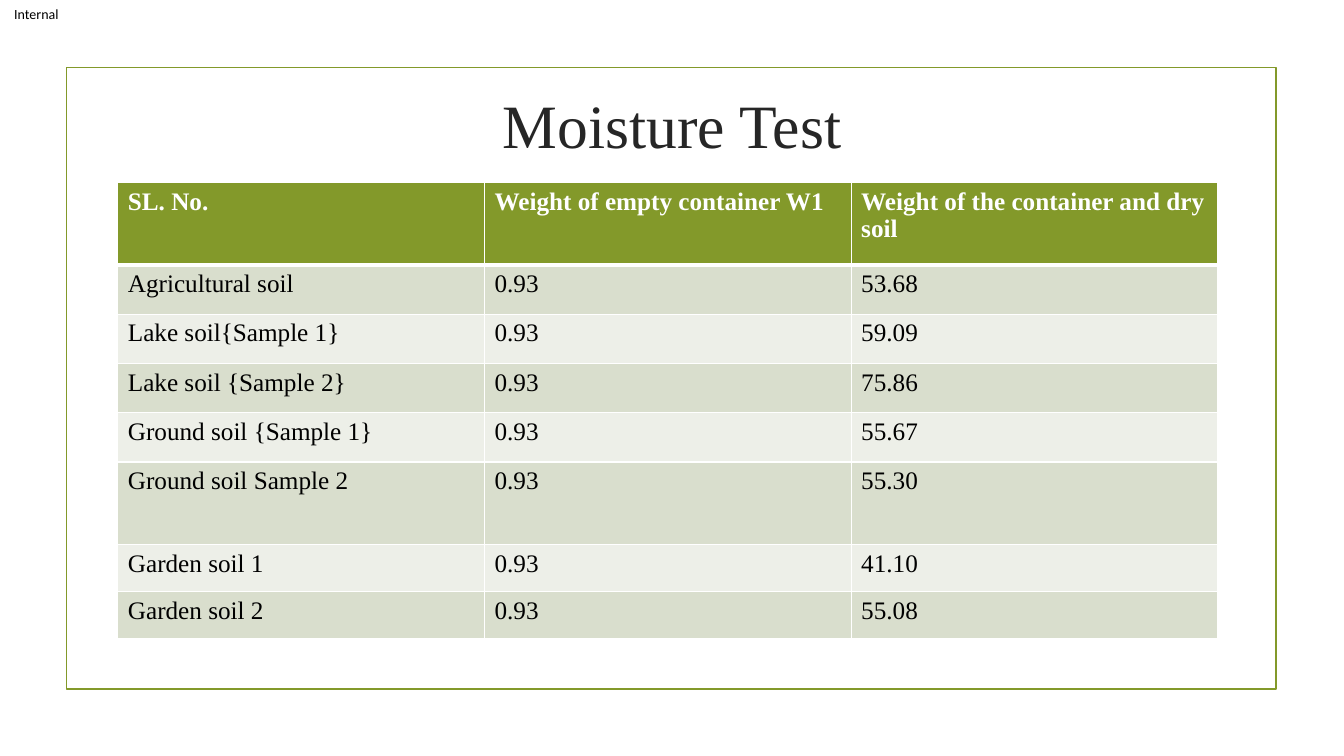
from lxml.etree import SubElement
from pptx import Presentation
from pptx.dml.color import RGBColor
from pptx.enum.shapes import MSO_SHAPE
from pptx.enum.text import MSO_ANCHOR, PP_ALIGN
from pptx.oxml.ns import qn
from pptx.util import Cm, Pt

GREEN = "83992A"
WHITE = "FFFFFF"
BLACK = "000000"
BANDS = ("D9DECD", "EDEFE8")
HEADS = ("SL. No.", "Weight of empty container W1", "Weight of the container and dry soil")
EMPTY = "0.93"
SOILS = (
    ("Agricultural soil", "53.68", 1.24),
    ("Lake soil{Sample 1}", "59.09", 1.24),
    ("Lake soil {Sample 2}", "75.86", 1.24),
    ("Ground soil {Sample 1}", "55.67", 1.24),
    ("Ground soil Sample 2", "55.30", 2.08),
    ("Garden soil 1", "41.10", 1.19),
    ("Garden soil 2", "55.08", 1.19),
)


def color(code):
    return RGBColor.from_string(code)


def write(frame, text, size=18, font="Times New Roman", ink=BLACK, bold=False, align=PP_ALIGN.LEFT):
    para = frame.paragraphs[0]
    para.alignment = align
    run = para.add_run()
    run.text = text
    run.font.size = Pt(size)
    run.font.name = font
    run.font.bold = bold
    run.font.color.rgb = color(ink)


class Painter:
    def __init__(self, slide, line=1.25):
        self.slide = slide
        self.line = line

    def frame(self, left, top, width, height):
        shape = self.slide.shapes.add_shape(
            MSO_SHAPE.RECTANGLE, Cm(left), Cm(top), Cm(width), Cm(height))
        shape.shadow.inherit = False
        shape.fill.background()
        shape.line.color.rgb = color(GREEN)
        shape.line.width = Pt(self.line)

    def label(self, text, left, top, width, height, inset=0, **style):
        box = self.slide.shapes.add_textbox(Cm(left), Cm(top), Cm(width), Cm(height))
        frame = box.text_frame
        frame.word_wrap = True
        frame.vertical_anchor = MSO_ANCHOR.MIDDLE
        frame.margin_left = Cm(inset)
        frame.margin_right = frame.margin_top = frame.margin_bottom = 0
        write(frame, text, **style)

    def edge(self, cell, side, width):
        props = cell._tc.get_or_add_tcPr()
        line = SubElement(props, qn("a:ln" + side), w=str(Pt(width)))
        fill = SubElement(line, qn("a:solidFill"))
        SubElement(fill, qn("a:srgbClr"), val=WHITE)

    def table(self, rows, left, top, width, heights):
        count = len(rows[0])
        table = self.slide.shapes.add_table(
            len(rows), count, Cm(left), Cm(top), Cm(width * count), Cm(sum(heights))).table
        for column in table.columns:
            column.width = Cm(width)
        for index, (texts, height) in enumerate(zip(rows, heights)):
            head = index == 0
            table.rows[index].height = Cm(height)
            for cell, text in zip(table.rows[index].cells, texts):
                for side in "LRTB":
                    thick = (side, index) in (("B", 0), ("T", 1))
                    self.edge(cell, side, 3 if thick else 1)
                cell.fill.solid()
                cell.fill.fore_color.rgb = color(GREEN if head else BANDS[(index - 1) % 2])
                write(cell.text_frame, text, ink=WHITE if head else BLACK, bold=head)


def main():
    deck = Presentation()
    deck.slide_width = Cm(33.87)
    deck.slide_height = Cm(19.05)
    paint = Painter(deck.slides.add_slide(deck.slide_layouts[6]))
    paint.frame(1.68, 1.7, 30.48, 15.67)
    paint.label("Internal", 0, 0, 1.85, 0.71, inset=0.36, size=10, font="Calibri")
    paint.label("Moisture Test", 3.61, 1.3, 26.67, 3.63,
                size=44, ink="262626", align=PP_ALIGN.CENTER)
    rows = [HEADS] + [(soil, EMPTY, weight) for soil, weight, _ in SOILS]
    heights = [2.08] + [height for _, _, height in SOILS]
    paint.table(rows, 2.97, 4.6, 9.24, heights)
    deck.save("out.pptx")


if __name__ == "__main__":
    main()
